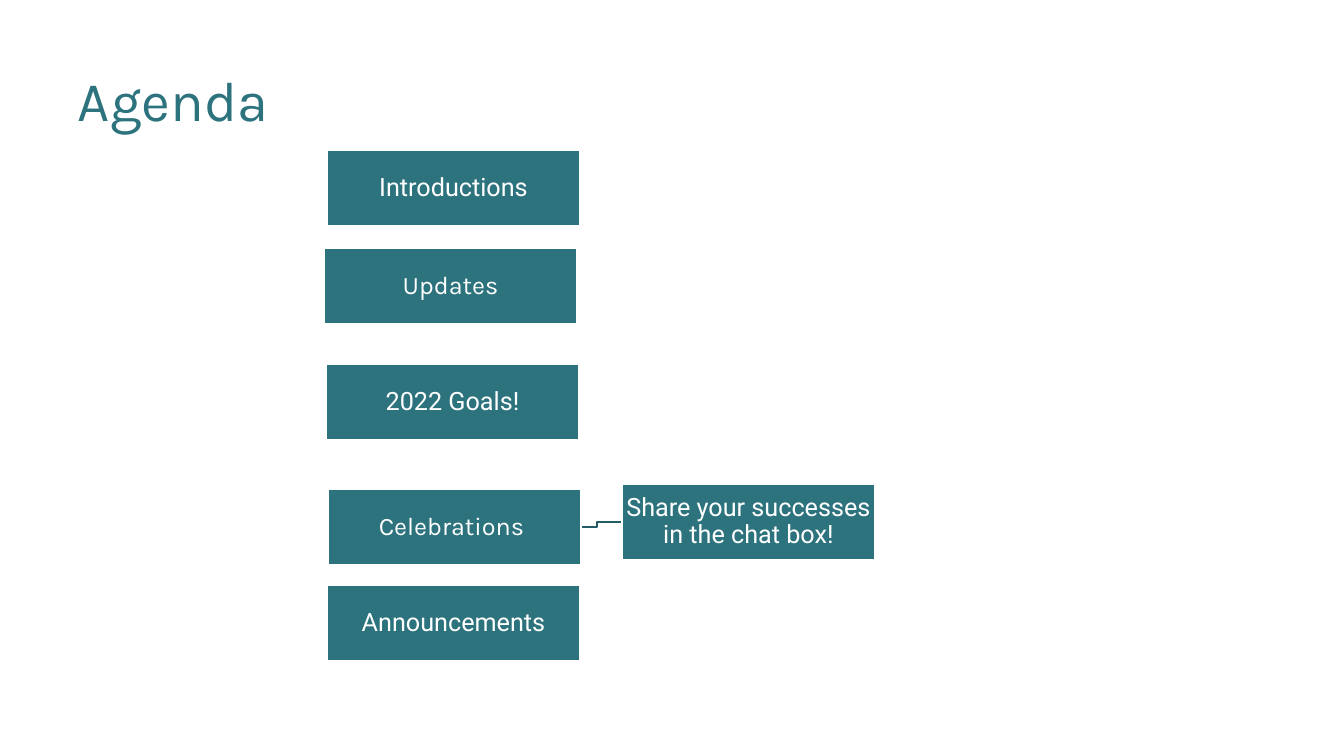
from pptx import Presentation
from pptx.dml.color import RGBColor
from pptx.enum.shapes import MSO_SHAPE as SHAPE
from pptx.enum.text import MSO_ANCHOR as ANCHOR, PP_ALIGN as ALIGN
from pptx.util import Pt

TITLE = ("Agenda", 68, 30, 1109, 113)
# text, left, top, font
BOXES = [
    ("Introductions", 327, 150, "Roboto"),
    ("Updates", 324, 248, "Karla"),
    ("2022 Goals!", 326, 364, "Roboto"),
    ("Celebrations ", 328, 489, "Karla"),
    ("Share your successes in the chat box!", 622, 484, "Roboto"),
    ("Announcements", 327, 585, "Roboto"),
]
ELBOW = [(581, 527), (597, 527), (597, 522), (622, 522)]
BOX_W, BOX_H = 253, 76
TEAL, DARK_TEAL, WHITE = "2D737E", "245C65", "FFFFFF"


def px(n):
    return round(n * 914400 / 100.8)


def rgb(value):
    return RGBColor.from_string(value)


def set_line(s, color):
    s.shadow.inherit = False
    s.line.color.rgb = rgb(color)
    s.line.width = Pt(1)


def write(s, text, font, size, color, frame, para):
    tf = s.text_frame
    for name, value in frame.items():
        setattr(tf, name, value)
    p = tf.paragraphs[0]
    for name, value in para.items():
        setattr(p, name, value)
    r = p.add_run()
    r.text = text
    for name, value in {"name": font, "size": Pt(size)}.items():
        setattr(r.font, name, value)
    r.font.color.rgb = rgb(color)


def add_title(slide):
    text, *place = TITLE
    s = slide.shapes.add_textbox(*map(px, place))
    frame = {"word_wrap": True, "vertical_anchor": ANCHOR.BOTTOM,
             "margin_left": px(10), "margin_right": px(10),
             "margin_top": px(5), "margin_bottom": px(10)}
    write(s, text, "Karla", 40, TEAL, frame, {"alignment": ALIGN.LEFT})


def add_elbow(slide):
    start, *rest = [(px(x), px(y)) for x, y in ELBOW]
    builder = slide.shapes.build_freeform(*start)
    builder.add_line_segments(rest, close=False)
    s = builder.convert_to_shape()
    s.fill.background()
    set_line(s, DARK_TEAL)


def add_box(slide, text, left, top, font):
    s = slide.shapes.add_shape(SHAPE.RECTANGLE, px(left), px(top), px(BOX_W), px(BOX_H))
    s.fill.solid()
    s.fill.fore_color.rgb = rgb(TEAL)
    set_line(s, WHITE)
    frame = {"word_wrap": True, "vertical_anchor": ANCHOR.MIDDLE}
    frame.update({f"margin_{side}": px(1) for side in ("left", "top", "right", "bottom")})
    para = {"alignment": ALIGN.CENTER, "line_spacing": 0.9, "space_after": Pt(6)}
    write(s, text, font, 18, WHITE, frame, para)


def main():
    prs = Presentation()
    prs.slide_width, prs.slide_height = px(1344), px(756)
    slide = prs.slides.add_slide(prs.slide_layouts[6])
    add_title(slide)
    add_elbow(slide)
    for box in BOXES:
        add_box(slide, *box)
    prs.save("out.pptx")


if __name__ == "__main__":
    main()
